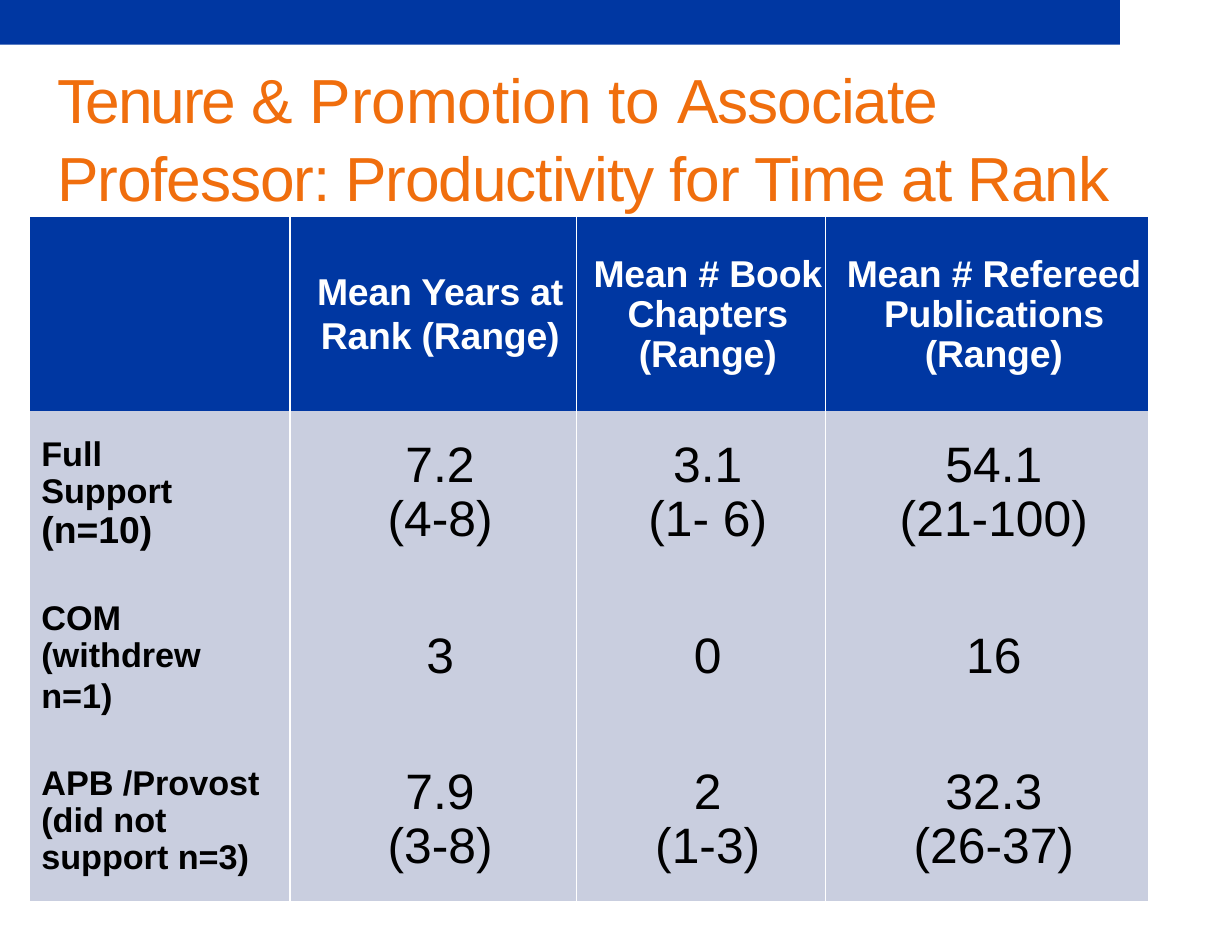
"""Build the tenure and promotion productivity slide."""
from pptx import Presentation, util as u
from pptx.dml.color import RGBColor
from pptx.enum import shapes, text
from pptx.oxml import parse_xml
from pptx.oxml.ns import nsdecls

COLORS = {"blue": "0037A2", "orange": "F06E0D", "pale": "C9CEDF",
          "white": "FFFFFF", "black": "000000"}
NO_GRID = "{2D5ABB26-0587-4C30-8999-92F81FD0307C}"
COLUMNS = [2.33, 2.56, 2.22, 2.89]
ROWS = [1.74, 1.46, 1.46, 1.46]
HEADERS = [
    [],
    ["Mean Years at", "Rank (Range)"],
    ["Mean # Book", "Chapters (Range)"],
    ["Mean # Refereed", "Publications (Range)"],
]
LABELS = [
    [[("Full\nSupport\n", {}), ("(n=10)", {"size": 24})]],
    ["COM\n(withdrew", "n=1)"],
    ["APB /Provost\n(did not\nsupport n=3)"],
]
VALUES = [
    [["7.2", "(4-8)"], ["3.1", "(1- 6)"], ["54.1", "(21-100)"]],
    [["3"], ["0"], ["16"]],
    [["7.9", "(3-8)"], ["2", "(1-3)"], ["32.3", "(26-37)"]],
]


def add_span(para, words, size=24, color="black", bold=False, tracking=0):
    """Add formatted text to a paragraph, breaking lines at newlines."""
    for number, line in enumerate(words.split("\n")):
        if number:
            para.add_line_break()
        if line:
            span = para.add_run()
            span.text = line
            font = span.font
            font.name, font.size, font.bold = "Arial", u.Pt(size), bold
            font.color.rgb = RGBColor.from_string(COLORS[color])
            span._r.get_or_add_rPr().set("spc", str(round(tracking * 100)))


class SlideBuilder:
    """Hold the style and the current slide."""

    def __init__(self, deck):
        """Start a title-only slide."""
        self.page = deck.slides.add_slide(deck.slide_layouts[5])

    def bar(self, left, top, width, height, color):
        """Draw a plain filled rectangle."""
        box = self.page.shapes.add_shape(
            shapes.MSO_SHAPE.RECTANGLE, *map(u.Inches, (left, top, width, height)))
        box.shadow.inherit = False
        box.fill.solid()
        box.fill.fore_color.rgb = RGBColor.from_string(COLORS[color])
        box.line.fill.background()

    def title(self, left, top, width, height, spans):
        """Place and fill the title."""
        box = self.page.shapes.title
        box.left, box.top, box.width, box.height = map(
            u.Inches, (left, top, width, height))
        frame = box.text_frame
        frame.word_wrap = True
        frame.auto_size = text.MSO_AUTO_SIZE.NONE
        frame.vertical_anchor = text.MSO_ANCHOR.TOP
        frame.margin_left = frame.margin_right = frame.margin_bottom = 0
        frame.margin_top = u.Inches(0.01)
        para = frame.paragraphs[0]
        para.alignment = text.PP_ALIGN.LEFT
        para.line_spacing = 1.05
        para.space_before = u.Pt(0.9)
        for words, tracking in spans:
            add_span(para, words, size=40, color="orange", tracking=tracking)

    def table(self, left, top, columns, rows):
        """Add a plain table with the given column widths and row heights."""
        frame = self.page.shapes.add_table(
            len(rows), len(columns), u.Inches(left), u.Inches(top),
            u.Inches(sum(columns)), u.Inches(sum(rows)))
        grid = frame.table
        grid._tbl.tblPr.find("{*}tableStyleId").text = NO_GRID
        for column, width in zip(grid.columns, columns):
            column.width = u.Inches(width)
        for row, height in zip(grid.rows, rows):
            row.height = u.Inches(height)
        return grid

    def cell(self, cell, paragraphs, fill, sides="LR", centered=True,
             before=0, margin_top=0.01, **style):
        """Fill one table cell with paragraphs, colour and white borders."""
        properties = cell._tc.get_or_add_tcPr()
        for side in sides:
            properties.append(parse_xml(
                f'<a:ln{side} {nsdecls("a")} w="12700"><a:solidFill>'
                f'<a:srgbClr val="{COLORS["white"]}"/></a:solidFill></a:ln{side}>'))
        cell.fill.solid()
        cell.fill.fore_color.rgb = RGBColor.from_string(COLORS[fill])
        cell.vertical_anchor = text.MSO_ANCHOR.MIDDLE
        cell.margin_left = cell.margin_right = cell.margin_bottom = 0
        cell.margin_top = u.Inches(margin_top)
        for number, spans in enumerate(paragraphs):
            frame = cell.text_frame
            para = frame.add_paragraph() if number else frame.paragraphs[0]
            para.alignment = text.PP_ALIGN.CENTER if centered else text.PP_ALIGN.LEFT
            para.line_spacing = 0.97
            para.space_before = u.Pt(before)
            indent = u.Inches(0.12 if centered else 0.11)
            para._p.get_or_add_pPr().set("marL", str(indent))
            if isinstance(spans, str):
                spans = [(spans, {})]
            for words, changes in spans:
                add_span(para, words, **{**style, **changes})


def main():
    """Build and save the deck."""
    deck = Presentation()
    deck.slide_width, deck.slide_height = u.Inches(11), u.Inches(8.5)
    slide = SlideBuilder(deck)
    slide.bar(0, 0, 10, 0.4, "blue")
    slide.title(0.51, 0.5, 9.91, 1.36, [
        ("Tenure ", -1.4), ("& Promotion to ", -0.1),
        ("Associate Professor: Productivity for Time at Rank", -0.7)])
    grid = slide.table(0.26, 1.93, COLUMNS, ROWS)
    for column, header in enumerate(HEADERS):
        slide.cell(grid.cell(0, column), header, "blue", sides="LRT",
                   before=2.4 if column == 1 else 0, margin_top=0.03,
                   color="white", bold=True, tracking=-0.1)
    for row, (label, values) in enumerate(zip(LABELS, VALUES), start=1):
        sides = "LRB" if row == len(LABELS) else "LR"
        slide.cell(grid.cell(row, 0), label, "pale", sides=sides, centered=False,
                   before=2.4, margin_top=0.03, size=22, bold=True)
        for column, value in enumerate(values, start=1):
            slide.cell(grid.cell(row, column), value, "pale", sides=sides, size=32)
    deck.save("out.pptx")


if __name__ == "__main__":
    main()
